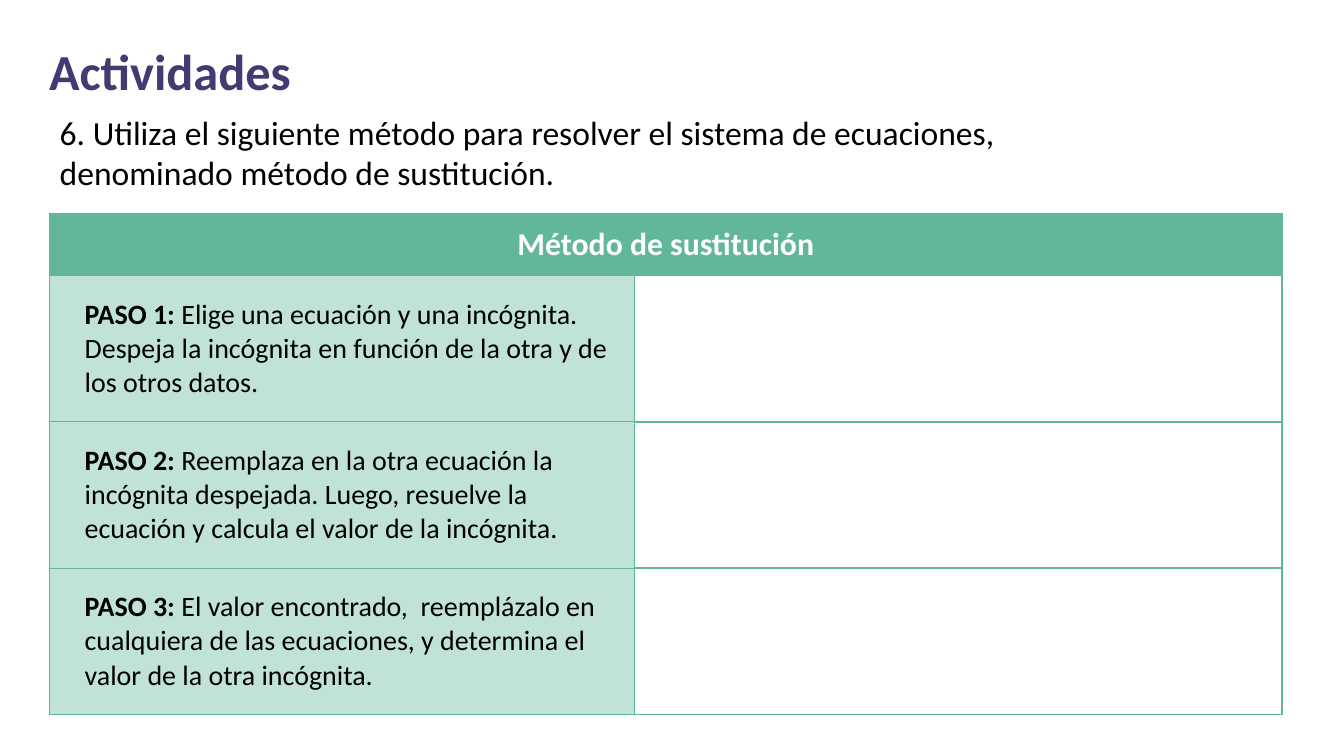
from dataclasses import dataclass

from lxml.etree import SubElement
from pptx import Presentation
from pptx.dml.color import RGBColor
from pptx.enum.text import MSO_ANCHOR, PP_ALIGN
from pptx.oxml.ns import qn
from pptx.util import Cm, Pt

COLORS = {
    "title": "423B71",
    "text": "000000",
    "white": "FFFFFF",
    "header": "63B799",
    "border": "60B698",
    "step": "C0E2D7",
}
THIN = ("border", 0.5)
THICK = ("header", 1)


@dataclass
class Label:
    text: str
    left: float
    top: float
    width: float
    height: float
    size: float
    color: str
    bold: bool = False


@dataclass
class Step:
    name: str
    text: str


LABELS = [
    Label("Actividades", 0.74, 0.66, 11.5, 1.35, 27, "title", True),
    Label(
        "6. Utiliza el siguiente método para resolver el sistema de ecuaciones, "
        "denominado método de sustitución.",
        0.94, 2.01, 20.98, 1.73, 18, "text",
    ),
]
STEPS = [
    Step("PASO 1: ", "Elige una ecuación y una incógnita. Despeja la incógnita "
         "en función de la otra y de los otros datos."),
    Step("PASO 2: ", "Reemplaza en la otra ecuación la incógnita despejada. Luego, "
         "resuelve la ecuación y calcula el valor de la incógnita."),
    Step("PASO 3: ", "El valor encontrado,  reemplázalo en cualquiera de las "
         "ecuaciones, y determina el valor de la otra incógnita."),
]


def set_attrs(obj, values: dict) -> None:
    for name, value in values.items():
        setattr(obj, name, value)


def margins(x: float, y: float) -> dict:
    return {
        "margin_left": Cm(x), "margin_right": Cm(x),
        "margin_top": Cm(y), "margin_bottom": Cm(y),
    }


def add_run(p, text: str, size: float, color: str, bold: bool) -> None:
    r = p.add_run()
    r.text = text
    set_attrs(r.font, {"name": "Calibri", "size": Pt(size), "bold": bold})
    r.font.color.rgb = RGBColor.from_string(COLORS[color])


def add_label(s, label: Label) -> None:
    sp = s.shapes.add_textbox(
        Cm(label.left), Cm(label.top), Cm(label.width), Cm(label.height)
    )
    tf = sp.text_frame
    set_attrs(tf, {"word_wrap": True, **margins(0.19, 0.1)})
    add_run(tf.paragraphs[0], label.text, label.size, label.color, label.bold)


def set_borders(cell, left=THIN, right=THIN, top=THIN, bottom=THIN) -> None:
    tcPr = cell._tc.get_or_add_tcPr()
    for side, (color, width) in zip("LRTB", (left, right, top, bottom)):
        ln = SubElement(tcPr, qn(f"a:ln{side}"), w=str(Pt(width)))
        fill = SubElement(ln, qn("a:solidFill"))
        SubElement(fill, qn("a:srgbClr"), val=COLORS[color])


def fill_cell(cell, color: str) -> None:
    cell.fill.solid()
    cell.fill.fore_color.rgb = RGBColor.from_string(COLORS[color])


def add_method_table(s, title: str, steps: list[Step]) -> None:
    widths = [11.05, 12.24]
    heights = [1.17] + [2.57] * len(steps)
    table = s.shapes.add_table(
        len(heights), len(widths), Cm(0.94), Cm(4.04),
        Cm(sum(widths)), Cm(sum(heights)),
    ).table
    set_attrs(table, {"first_row": False, "horz_banding": False})
    for column, width in zip(table.columns, widths):
        column.width = Cm(width)
    for row, height in zip(table.rows, heights):
        row.height = Cm(height)

    header = table.cell(0, 0)
    header.merge(table.cell(0, 1))
    for cell in table.rows[0].cells:
        set_borders(cell, THICK, THICK, THICK, THIN)
        fill_cell(cell, "header")
    set_attrs(header, {"vertical_anchor": MSO_ANCHOR.MIDDLE, **margins(0.2, 0.1)})
    p = header.text_frame.paragraphs[0]
    p.alignment = PP_ALIGN.CENTER
    add_run(p, title, 17, "white", True)

    for i, step in enumerate(steps, 1):
        cell, answer = table.cell(i, 0), table.cell(i, 1)
        set_borders(cell)
        fill_cell(cell, "step")
        set_attrs(cell, {"vertical_anchor": MSO_ANCHOR.MIDDLE, **margins(0.41, 0.41)})
        p = cell.text_frame.paragraphs[0]
        p._p.get_or_add_pPr().set("marL", str(Cm(0.25)))
        add_run(p, step.name, 15, "text", True)
        add_run(p, step.text, 15, "text", False)
        set_borders(answer, THIN, THICK, THICK, THICK)
        answer.fill.background()


def main() -> None:
    prs = Presentation()
    set_attrs(prs, {"slide_width": Cm(25.4), "slide_height": Cm(14.29)})
    s = prs.slides.add_slide(prs.slide_layouts[6])
    add_method_table(s, "Método de sustitución", STEPS)
    for label in LABELS:
        add_label(s, label)
    prs.save("out.pptx")


if __name__ == "__main__":
    main()
